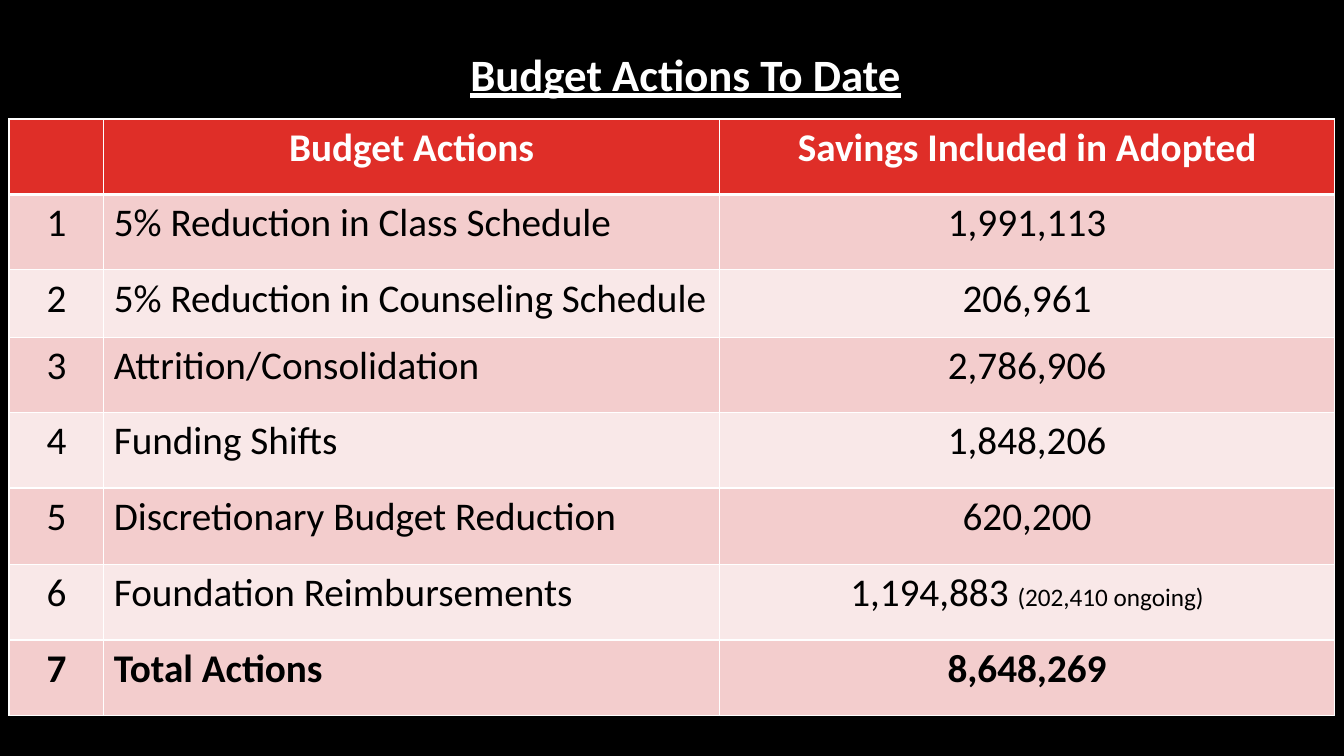
from lxml import etree
from pptx import Presentation
from pptx.dml.color import RGBColor
from pptx.enum.text import MSO_ANCHOR, PP_ALIGN
from pptx.oxml.ns import qn
from pptx.util import Inches, Pt

LEFT, CENTER = PP_ALIGN.LEFT, PP_ALIGN.CENTER
TOP = MSO_ANCHOR.TOP
BLACK = RGBColor(0x00, 0x00, 0x00)
WHITE = RGBColor(0xFF, 0xFF, 0xFF)
RED = RGBColor(0xDF, 0x2E, 0x28)
PINK = RGBColor(0xF3, 0xCD, 0xCD)
PALE_PINK = RGBColor(0xF9, 0xE8, 0xE8)
FONT = "Calibri"
BODY_SIZE, NOTE_SIZE, TITLE_SIZE = 28, 18, 32
THIN, THICK = 1, 3

COLUMN_WIDTHS = [0.94, 6.11, 6.11]
ROW_HEIGHTS = [0.75, 0.75, 0.67, 0.75, 0.75, 0.76, 0.75, 0.75]
HEADINGS = ["", "Budget Actions", "Savings Included in Adopted"]
ACTIONS = [
    ("5% Reduction in Class Schedule", "1,991,113", ""),
    ("5% Reduction in Counseling Schedule", "206,961", ""),
    ("Attrition/Consolidation", "2,786,906", ""),
    ("Funding Shifts", "1,848,206", ""),
    ("Discretionary Budget Reduction", "620,200", ""),
    ("Foundation Reimbursements", "1,194,883 ", "(202,410 ongoing)"),
    ("Total Actions", "8,648,269", ""),
]


def add_run(paragraph, text, size, color, bold):
    """Add one formatted run to a paragraph and return it."""
    run = paragraph.add_run()
    run.text = text
    run.font.name = FONT
    run.font.size = Pt(size)
    run.font.color.rgb = color
    run.font.bold = bold
    return run


def set_borders(cell, top, bottom):
    """Draw white borders around a cell with the given top and bottom widths."""
    properties = cell._tc.get_or_add_tcPr()
    for side, width in (("L", THIN), ("R", THIN), ("T", top), ("B", bottom)):
        line = etree.SubElement(properties, qn(f"a:ln{side}"), w=str(Pt(width)))
        fill = etree.SubElement(line, qn("a:solidFill"))
        etree.SubElement(fill, qn("a:srgbClr"), val=str(WHITE))


def fill_cell(cell, texts, alignment, fill, color, bold):
    """Write the runs of a cell and set its fill."""
    cell.fill.solid()
    cell.fill.fore_color.rgb = fill
    paragraph = cell.text_frame.paragraphs[0]
    paragraph.alignment = alignment
    for text, size in zip(texts, (BODY_SIZE, NOTE_SIZE)):
        if text:
            add_run(paragraph, text, size, color, bold)


def add_title(slide, left, top, width, height):
    """Place the underlined title, centred right of its indent."""
    frame = slide.shapes.add_textbox(left, top, width, height).text_frame
    frame.word_wrap = True
    frame.vertical_anchor = TOP
    frame.margin_left = Inches(0.61)
    paragraph = frame.paragraphs[0]
    paragraph.alignment = CENTER
    run = add_run(paragraph, "Budget Actions To Date", TITLE_SIZE, WHITE, True)
    run.font.underline = True


def add_budget_table(slide, left, top, width, height):
    """Place the table of budget actions, sharing the box out by row and column."""
    rows = [[(heading,) for heading in HEADINGS]]
    for number, (action, amount, note) in enumerate(ACTIONS, 1):
        rows.append([(str(number),), (action,), (amount, note)])
    table = slide.shapes.add_table(
        len(rows), len(HEADINGS), left, top, width, height).table
    for column, share in zip(table.columns, COLUMN_WIDTHS):
        column.width = int(width * share / sum(COLUMN_WIDTHS))
    for row, share in zip(table.rows, ROW_HEIGHTS):
        row.height = int(height * share / sum(ROW_HEIGHTS))
    for row_index, row in enumerate(rows):
        header = row_index == 0
        fill = RED if header else (PALE_PINK, PINK)[row_index % 2]
        color = WHITE if header else BLACK
        bold = header or row_index == len(ACTIONS)
        for column_index, texts in enumerate(row):
            cell = table.cell(row_index, column_index)
            alignment = LEFT if column_index == 1 and not header else CENTER
            set_borders(cell, THICK if row_index == 1 else THIN,
                        THICK if header else THIN)
            fill_cell(cell, texts, alignment, fill, color, bold)


def main():
    """Build the budget slide and save it."""
    presentation = Presentation()
    presentation.slide_width = Inches(13.33)
    presentation.slide_height = Inches(7.5)
    slide = presentation.slides.add_slide(presentation.slide_layouts[6])
    slide.background.fill.solid()
    slide.background.fill.fore_color.rgb = BLACK
    add_budget_table(slide, Inches(0.09), Inches(1.18), Inches(13.15), Inches(5.92))
    add_title(slide, Inches(3.21), Inches(0.41), Inches(6.67), Inches(0.64))
    presentation.save("out.pptx")


if __name__ == "__main__":
    main()
